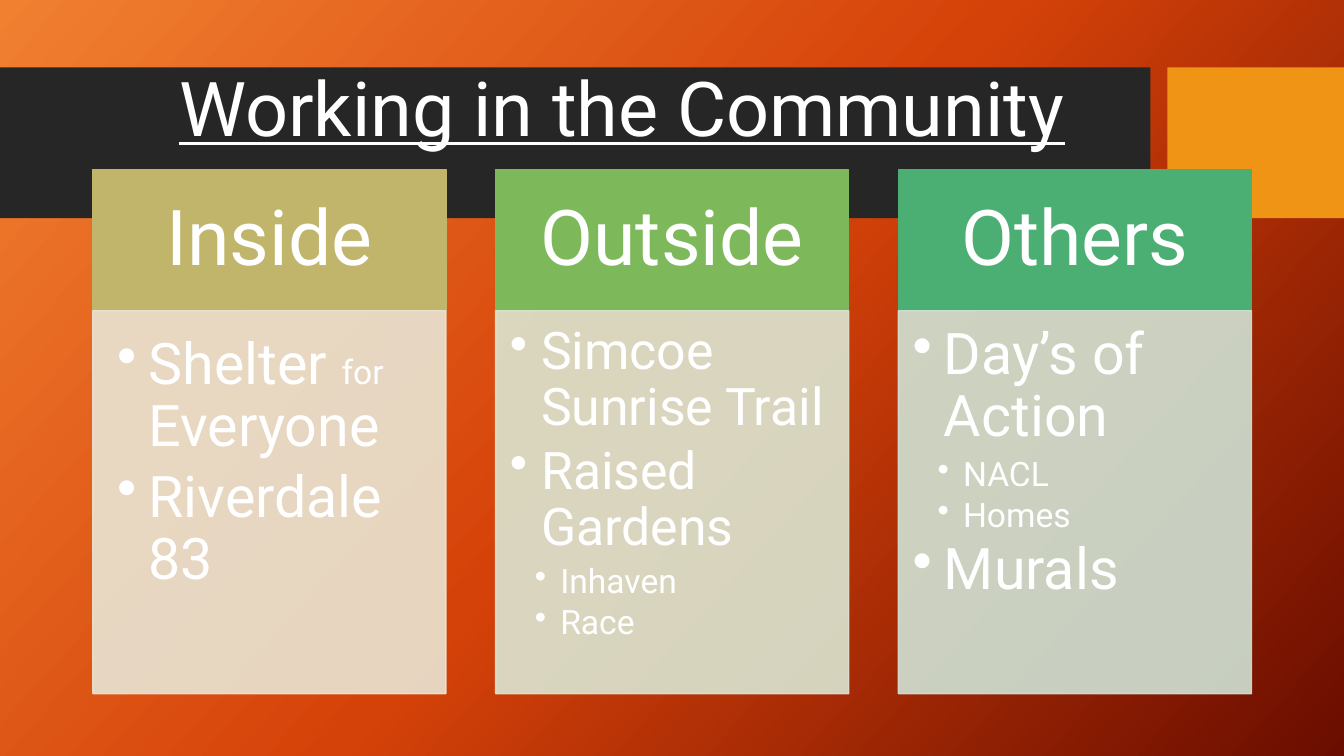
"""Build the community work slide with three topic cards."""
from collections import namedtuple
from copy import deepcopy
from dataclasses import dataclass

from lxml import etree
from pptx import Presentation
from pptx import util as u
from pptx.dml.color import RGBColor
from pptx.enum import shapes, text
from pptx.oxml.ns import qn

Box = namedtuple("Box", "left top width height")
Card = namedtuple("Card", "heading strong pale insets size items")


@dataclass(frozen=True)
class Theme:
    """Colours, font and type sizes of the slide."""
    font: str = "Roboto"
    white: str = "FFFFFF"
    band: str = "262626"
    accent: str = "F09415"
    backdrop: tuple = ((0, "F18031"), (0.5, "D54209"), (1, "6A0D00"))
    title: int = 54
    heading: int = 55
    small: int = 24
    spacing: float = 0.9
    gap: float = 0.15


THEME = Theme()
WIDE = (0.61, 0.61, 0.81, 0.91)
TIGHT = (0.36, 0.36, 0.48, 0.53)
HEADING_INSETS = (1.09, 0.61, 1.09, 0.61)
CARDS = (
    Card("Inside", "C1B56B", "E9E5D4", WIDE, 41,
         ((1, (("Shelter ", 41), ("for", 24), (" Everyone", 41))),
          (1, "Riverdale 83"))),
    Card("Outside", "7DB95A", "DBE6D2", TIGHT, 37,
         ((1, "Simcoe Sunrise Trail"), (1, "Raised Gardens"),
          (2, "Inhaven"), (2, "Race"))),
    Card("Others", "4BAF73", "D0E3D5", TIGHT, 41,
         ((1, "Day’s of Action"), (2, "NACL"), (2, "Homes"), (1, "Murals"))),
)


def apply(target, values):
    """Set each named attribute of the target."""
    for name, value in values.items():
        setattr(target, name, value)


def add_span(para, words, size, **extra):
    """Add a white run of text to a paragraph."""
    span = para.add_run()
    span.text = words
    apply(span.font, {"name": THEME.font, "size": u.Pt(size), **extra})
    span.font.color.rgb = RGBColor.from_string(THEME.white)


def set_frame(frame, anchor, insets):
    """Set the anchor and insets of a text frame."""
    left, top, right, bottom = map(u.Cm, insets)
    apply(frame, {"word_wrap": True, "auto_size": text.MSO_AUTO_SIZE.NONE,
                  "vertical_anchor": anchor, "margin_left": left,
                  "margin_top": top, "margin_right": right,
                  "margin_bottom": bottom})


def add_panel(page, box, colour, opacity=None, outlined=True):
    """Add a flat rectangle, translucent when an opacity is given."""
    panel = page.shapes.add_shape(shapes.MSO_SHAPE.RECTANGLE, *map(u.Cm, box))
    panel.shadow.inherit = False
    fills = [panel.fill]
    if outlined:
        panel.line.width = u.Pt(1)
        fills.append(panel.line.fill)
    else:
        panel.line.fill.background()
    for fill in fills:
        fill.solid()
        fill.fore_color.rgb = RGBColor.from_string(colour)
    if opacity:
        for tint in panel._element.spPr.iter(qn("a:srgbClr")):
            etree.SubElement(tint, qn("a:alpha"), val=str(opacity * 1000))
    return panel


def add_bullet(para, level):
    """Give a paragraph a hanging bullet."""
    left, hang = {1: (0.79, 0.79), 2: (1.27, 0.64)}[level]
    props = para._p.get_or_add_pPr()
    props.set("marL", str(u.Cm(left)))
    props.set("indent", str(-u.Cm(hang)))
    etree.SubElement(props, qn("a:buChar"), char="•")


def paint_backdrop(page):
    """Fill the background with a three-stop diagonal gradient."""
    fill = page.background.fill
    fill.gradient()
    fill.gradient_angle = 318
    stops = next(page._element.iter(qn("a:gsLst")))
    stops.append(deepcopy(stops[-1]))
    for stop, (position, colour) in zip(fill.gradient_stops, THEME.backdrop):
        stop.color.rgb = RGBColor.from_string(colour)
        stop.position = position


def add_banner(page, box):
    """Place the dark band, the accent block and the title."""
    block, space = 4.45, 0.43
    band = box.width - block - space
    parts = ((box._replace(width=band), THEME.band),
             (box._replace(left=box.left + band + space, width=block), THEME.accent))
    for area, colour in parts:
        panel = add_panel(page, area, colour, outlined=False)
        page.shapes._spTree.insert(2, panel._element)
    title = page.shapes.title
    apply(title, {"left": u.Cm(box.left - 0.76), "top": u.Cm(box.top - 0.73),
                  "width": u.Cm(32.87), "height": u.Cm(3.68)})
    set_frame(title.text_frame, text.MSO_ANCHOR.MIDDLE, (0.25, 0.13, 0.25, 0.13))
    para = title.text_frame.paragraphs[0]
    apply(para, {"alignment": text.PP_ALIGN.CENTER, "line_spacing": THEME.spacing})
    add_span(para, "Working in the Community", THEME.title, underline=True)


def add_card(page, box, card):
    """Place a heading block above its bulleted body."""
    head = 3.56
    heading = add_panel(page, box._replace(height=head), card.strong)
    set_frame(heading.text_frame, text.MSO_ANCHOR.MIDDLE, HEADING_INSETS)
    para = heading.text_frame.paragraphs[0]
    apply(para, {"alignment": text.PP_ALIGN.CENTER, "line_spacing": THEME.spacing})
    add_span(para, card.heading, THEME.heading)

    area = box._replace(top=box.top + head, height=box.height - head)
    frame = add_panel(page, area, card.pale, opacity=90).text_frame
    set_frame(frame, text.MSO_ANCHOR.TOP, card.insets)
    for index, (level, words) in enumerate(card.items):
        para = frame.add_paragraph() if index else frame.paragraphs[0]
        size = card.size if level == 1 else THEME.small
        add_bullet(para, level)
        apply(para, {"alignment": text.PP_ALIGN.LEFT, "level": level,
                     "line_spacing": THEME.spacing,
                     "space_after": u.Pt(size * THEME.gap)})
        spans = ((words, size),) if isinstance(words, str) else words
        for span in spans:
            add_span(para, *span)


def main():
    """Build and save the deck."""
    deck = Presentation()
    apply(deck, {"slide_width": u.Cm(33.87), "slide_height": u.Cm(19.05)})
    page = deck.slides.add_slide(deck.slide_layouts.get_by_name("Title Only"))
    paint_backdrop(page)
    add_banner(page, Box(0, 1.7, 33.87, 3.8))
    for index, card in enumerate(CARDS):
        add_card(page, Box(2.34 + index * 10.15, 4.27, 8.9, 13.21), card)
    deck.save("out.pptx")


if __name__ == "__main__":
    main()
